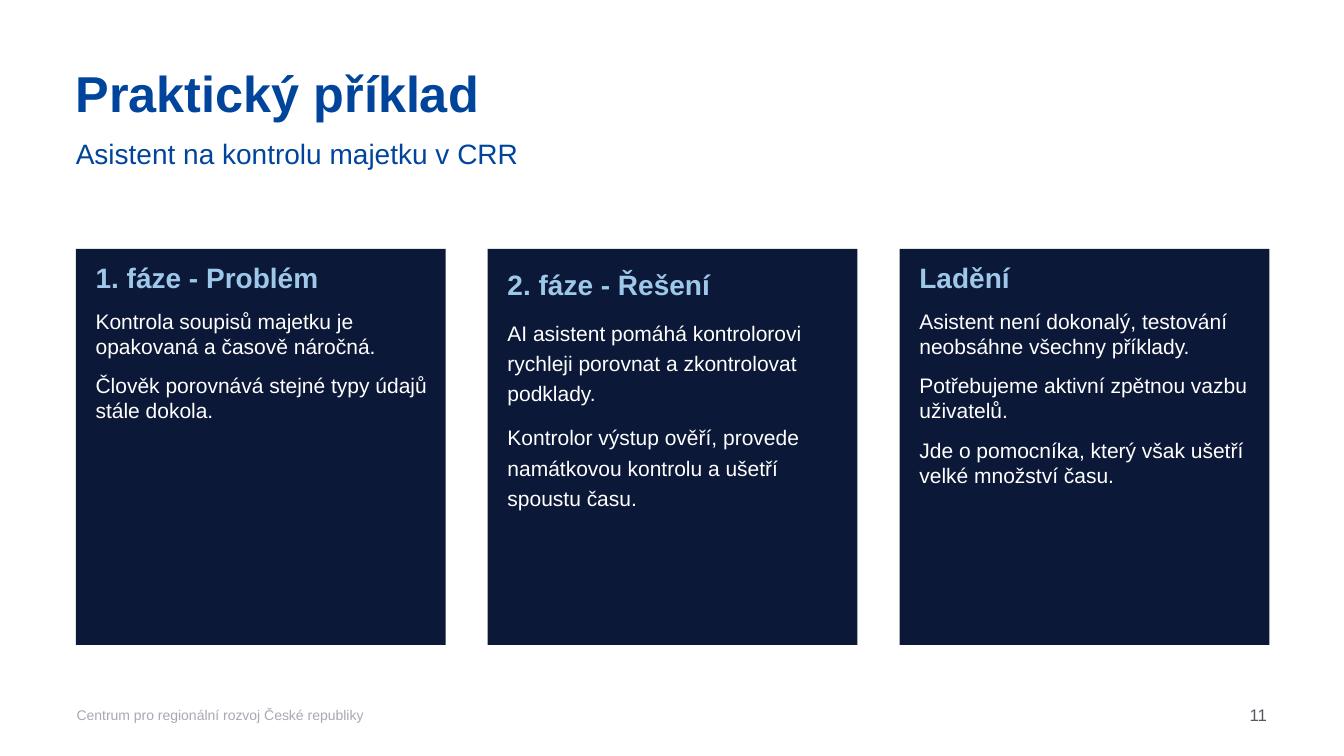
from pptx import Presentation
from pptx.dml.color import RGBColor
from pptx.enum.shapes import MSO_SHAPE
from pptx.enum.text import MSO_ANCHOR, PP_ALIGN
from pptx.util import Cm, Pt

BLUE = RGBColor(0x00, 0x45, 0x9B)
NAVY = RGBColor(0x0C, 0x18, 0x38)
SKY = RGBColor(0x9D, 0xC8, 0xE9)
WHITE = RGBColor(0xFF, 0xFF, 0xFF)
GREY = RGBColor(0xA7, 0xA9, 0xB3)
SLATE = RGBColor(0x54, 0x58, 0x60)

LEFT = 1.91
STEP = 10.38

CARDS = [
    ("1. fáze - Problém", 1.0, [
        "Kontrola soupisů majetku je opakovaná a časově náročná.",
        "Člověk porovnává stejné typy údajů stále dokola.",
    ]),
    ("2. fáze - Řešení", 1.2, [
        "AI asistent pomáhá kontrolorovi rychleji porovnat a zkontrolovat podklady.",
        "Kontrolor výstup ověří, provede namátkovou kontrolu a ušetří spoustu času.",
    ]),
    ("Ladění", 1.0, [
        "Asistent není dokonalý, testování neobsáhne všechny příklady.",
        "Potřebujeme aktivní zpětnou vazbu uživatelů.",
        "Jde o pomocníka, který však ušetří velké množství času.",
    ]),
]


def set_frame(frame, insets, anchor=MSO_ANCHOR.TOP):
    """Wrap the text and set the left, top, right and bottom insets in cm."""
    frame.word_wrap = True
    frame.vertical_anchor = anchor
    for side, inset in zip(("left", "top", "right", "bottom"), insets):
        setattr(frame, f"margin_{side}", Cm(inset))


def write(para, text, size, color, bold=False, **layout):
    para.text = text
    for name, value in {"alignment": PP_ALIGN.LEFT, **layout}.items():
        setattr(para, name, value)
    style = {"name": "Arial", "size": Pt(size), "bold": bold}
    for name, value in style.items():
        setattr(para.font, name, value)
    para.font.color.rgb = color


def add_label(slide, box, text, size, color, anchor=MSO_ANCHOR.TOP, **layout):
    frame = slide.shapes.add_textbox(*map(Cm, box)).text_frame
    set_frame(frame, (0, 0, 0, 0), anchor)
    write(frame.paragraphs[0], text, size, color, **layout)


def add_card(slide, left, head, spacing, points):
    card = slide.shapes.add_shape(
        MSO_SHAPE.RECTANGLE, Cm(left), Cm(6.27), Cm(9.32), Cm(9.98))
    card.shadow.inherit = False
    card.fill.solid()
    card.fill.fore_color.rgb = NAVY
    card.line.fill.background()
    frame = card.text_frame
    set_frame(frame, (0.5, 0.3, 0.4, 0.2))
    layout = {"line_spacing": spacing, "space_after": Pt(10)}
    write(frame.paragraphs[0], head, 20, SKY, bold=True, **layout)
    for point in points:
        write(frame.add_paragraph(), point, 15, WHITE, **layout)


def main():
    deck = Presentation()
    deck.slide_width, deck.slide_height = Cm(33.87), Cm(19.05)
    slide = deck.slides.add_slide(deck.slide_layouts[6])
    add_label(slide, (LEFT, 1.73, 27.5, 1.68), "Praktický příklad", 36, BLUE,
              bold=True, line_spacing=0.9)
    add_label(slide, (LEFT, 3.45, 14.6, 2.13),
              "Asistent na kontrolu majetku v CRR", 20, BLUE)
    for index, card in enumerate(CARDS):
        add_card(slide, LEFT + index * STEP, *card)
    add_label(slide, (1.93, 17.5, 10.97, 1.02),
              "Centrum pro regionální rozvoj České republiky", 10, GREY,
              MSO_ANCHOR.MIDDLE)
    add_label(slide, (24.31, 17.5, 7.62, 1.02), "11", 12, SLATE,
              MSO_ANCHOR.MIDDLE, alignment=PP_ALIGN.RIGHT)
    deck.save("out.pptx")


if __name__ == "__main__":
    main()
